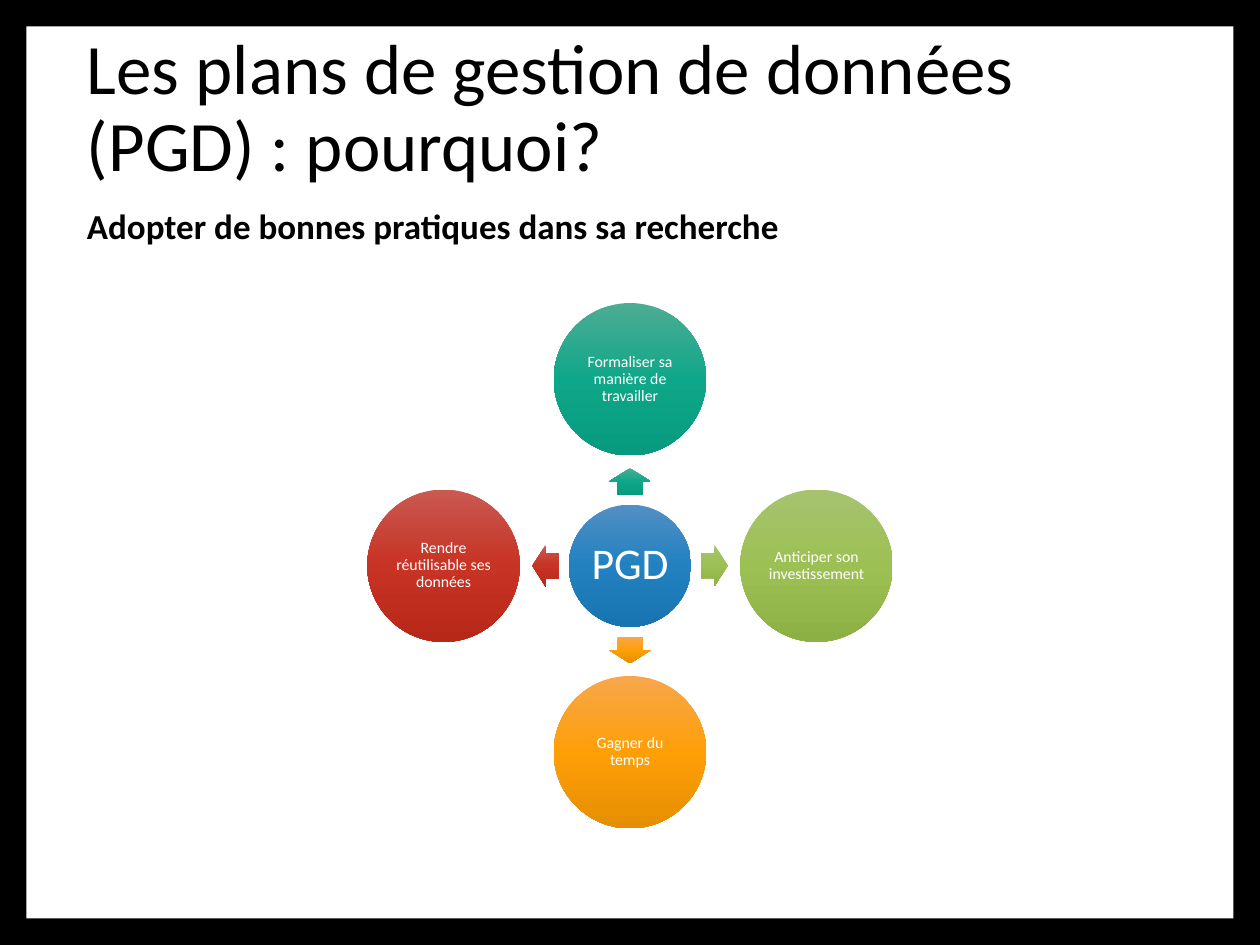
from dataclasses import dataclass

from lxml.etree import SubElement
from pptx import Presentation
from pptx.dml.color import RGBColor
from pptx.enum.shapes import MSO_SHAPE as Shape
from pptx.enum.text import MSO_ANCHOR as Anchor, PP_ALIGN as Align
from pptx.oxml.ns import qn
from pptx.util import Emu, Inches, Pt

SLIDE_W, SLIDE_H = Inches(10), Inches(7.5)
FONT = "Calibri"
BLACK = RGBColor(0x00, 0x00, 0x00)
WHITE = RGBColor(0xFF, 0xFF, 0xFF)

Shades = tuple[RGBColor, RGBColor, RGBColor]
BLUE = (RGBColor(0x52, 0x8F, 0xC4), RGBColor(0x22, 0x81, 0xC0), RGBColor(0x18, 0x74, 0xB1))
TEAL = (RGBColor(0x4D, 0xAC, 0x94), RGBColor(0x0F, 0xA7, 0x89), RGBColor(0x07, 0x9A, 0x7E))
GREEN = (RGBColor(0xA6, 0xC3, 0x6F), RGBColor(0x9D, 0xC0, 0x54), RGBColor(0x8D, 0xB0, 0x45))
ORANGE = (RGBColor(0xF7, 0xA7, 0x4C), RGBColor(0xFE, 0x9F, 0x07), RGBColor(0xE5, 0x8E, 0x03))
RED = (RGBColor(0xCA, 0x59, 0x52), RGBColor(0xC7, 0x33, 0x24), RGBColor(0xB8, 0x28, 0x19))


@dataclass(frozen=True)
class Box:
    left: int
    top: int
    width: int
    height: int

    @classmethod
    def share(cls, left: float, top: float, width: float, height: float) -> "Box":
        """Box given as shares of the slide's width and height."""
        return cls(Emu(int(SLIDE_W * left)), Emu(int(SLIDE_H * top)),
                   Emu(int(SLIDE_W * width)), Emu(int(SLIDE_H * height)))

    @classmethod
    def around(cls, x: int, y: int, width: int, height: int) -> "Box":
        """Box centred on a point."""
        return cls(x - width // 2, y - height // 2, width, height)

    @property
    def args(self) -> tuple[int, int, int, int]:
        return self.left, self.top, self.width, self.height


@dataclass(frozen=True)
class Reason:
    text: str
    dx: int
    dy: int
    angle: int
    shades: Shades


REASONS = (
    Reason("Formaliser sa manière de travailler", 0, -1, 270, TEAL),
    Reason("Anticiper son investissement", 1, 0, 0, GREEN),
    Reason("Gagner du temps", 0, 1, 90, ORANGE),
    Reason("Rendre réutilisable ses données", -1, 0, 180, RED),
)

# Radial diagram, measured from its centre
CENTER_X, CENTER_Y = SLIDE_W // 2, Inches(4.49)
HUB, CIRCLE = Inches(0.97), Inches(1.21)
ARROW_W, ARROW_H = Inches(0.21), Inches(0.33)
CIRCLE_REACH, ARROW_REACH = Inches(1.48), Inches(0.67)
LABEL_SHARE = 0.7


def add_text(slide, box: Box, text: str, *, size: float, color: RGBColor = BLACK,
             bold: bool = False, align=Align.LEFT, anchor=Anchor.TOP,
             insets: tuple[float, float, float, float] = (0, 0.05, 0, 0.05)) -> None:
    """Insets are left, top, right and bottom in inches."""
    tf = slide.shapes.add_textbox(*box.args).text_frame
    tf.word_wrap = True
    tf.vertical_anchor = anchor
    tf.margin_left, tf.margin_top, tf.margin_right, tf.margin_bottom = map(Inches, insets)
    p = tf.paragraphs[0]
    p.alignment, p.line_spacing = align, 0.9
    r = p.add_run()
    r.text = text
    r.font.name, r.font.size, r.font.bold = FONT, Pt(size), bold
    r.font.color.rgb = color


def add_shape(slide, kind, box: Box):
    sp = slide.shapes.add_shape(kind, *box.args)
    sp.shadow.inherit = False
    sp.line.fill.background()
    return sp


def shade(sp, shades: Shades) -> None:
    """Fill from top to bottom, whatever the rotation of the shape."""
    sp.fill.gradient()
    sp.fill.gradient_angle = 270
    grad = sp.fill._xPr.find(qn("a:gradFill"))
    grad.set("rotWithShape", "0")
    stops = grad.find(qn("a:gsLst"))
    stops.clear()
    for pos, color in zip((0, 50000, 100000), shades):
        stop = SubElement(stops, qn("a:gs"), pos=str(pos))
        SubElement(stop, qn("a:srgbClr"), val=str(color))


def add_circle(slide, x: int, y: int, diameter: int, shades: Shades,
               text: str, size: float, inset: float) -> None:
    shade(add_shape(slide, Shape.OVAL, Box.around(x, y, diameter, diameter)), shades)
    side = int(diameter * LABEL_SHARE)
    add_text(slide, Box.around(x, y, side, side), text, size=size, color=WHITE,
             align=Align.CENTER, anchor=Anchor.MIDDLE, insets=(inset,) * 4)


def add_reason(slide, reason: Reason) -> None:
    arrow = add_shape(slide, Shape.RIGHT_ARROW, Box.around(
        CENTER_X + reason.dx * ARROW_REACH, CENTER_Y + reason.dy * ARROW_REACH,
        ARROW_W, ARROW_H))
    arrow.adjustments[0], arrow.adjustments[1] = 0.6, 0.5
    arrow.rotation = reason.angle
    shade(arrow, reason.shades)
    add_circle(slide, CENTER_X + reason.dx * CIRCLE_REACH,
               CENTER_Y + reason.dy * CIRCLE_REACH,
               CIRCLE, reason.shades, reason.text, 9, 0.01)


def main() -> None:
    prs = Presentation()
    prs.slide_width, prs.slide_height = SLIDE_W, SLIDE_H
    slide = prs.slides.add_slide(prs.slide_layouts[6])
    bg = slide.background.fill
    bg.solid()
    bg.fore_color.rgb = BLACK

    panel = add_shape(slide, Shape.RECTANGLE, Box.share(0.021, 0.028, 0.958, 0.944))
    panel.fill.solid()
    panel.fill.fore_color.rgb = WHITE

    add_text(slide, Box.share(0.069, 0.208, 0.862, 0.611),
             "Adopter de bonnes pratiques dans sa recherche",
             size=20, bold=True, insets=(0, 0.1, 0, 0.05))
    add_text(slide, Box.share(0.069, 0.027, 0.862, 0.177),
             "Les plans de gestion de données (PGD) : pourquoi?",
             size=40.5, anchor=Anchor.BOTTOM)

    add_circle(slide, CENTER_X, CENTER_Y, HUB, BLUE, "PGD", 25, 0.03)
    for reason in REASONS:
        add_reason(slide, reason)

    prs.save("out.pptx")


if __name__ == "__main__":
    main()
